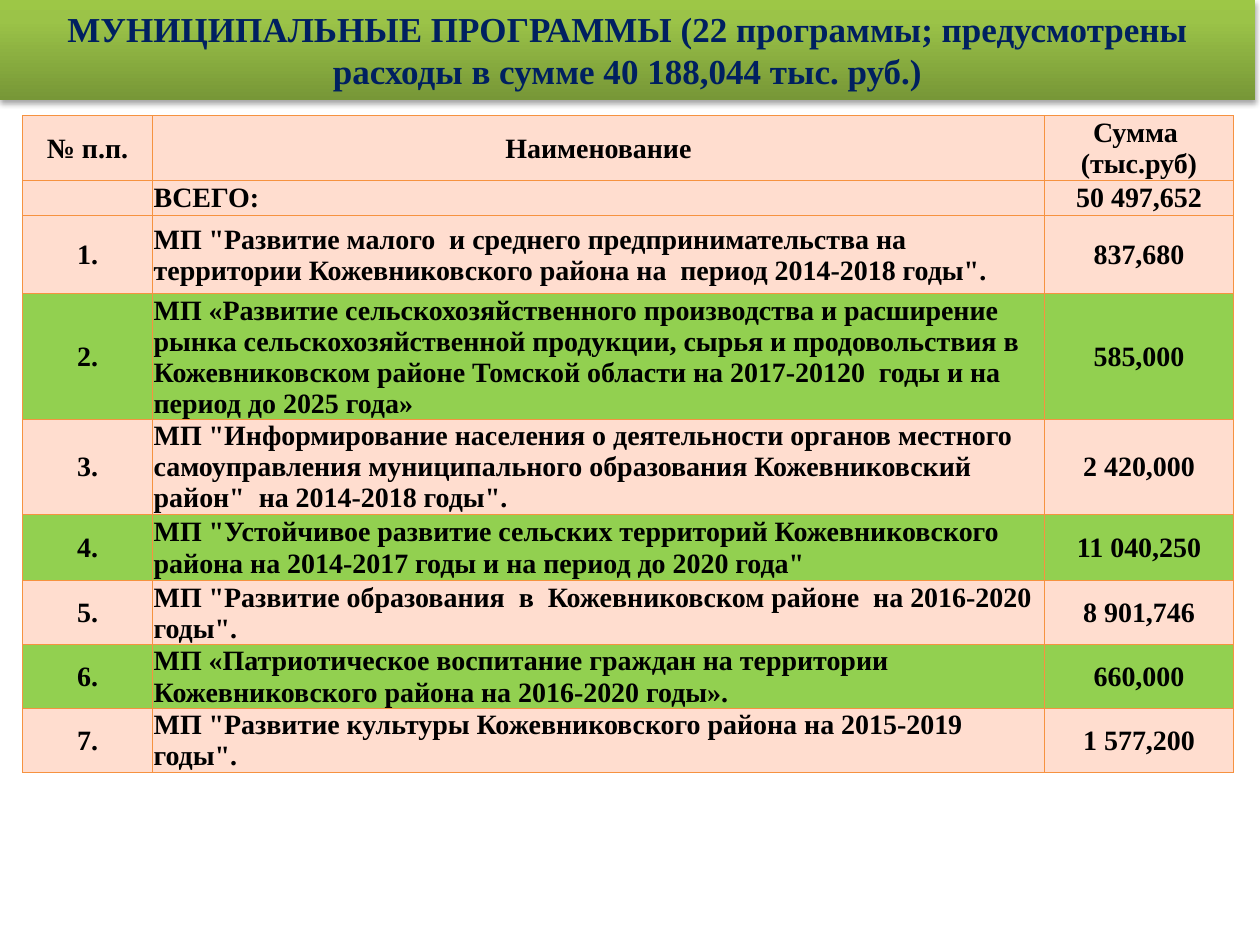
from dataclasses import dataclass
from lxml.etree import SubElement
from pptx import Presentation
from pptx.dml.color import RGBColor
from pptx.enum.text import MSO_ANCHOR as Anchor, MSO_AUTO_SIZE as AutoSize, PP_ALIGN as Align
from pptx.oxml import parse_xml
from pptx.oxml.ns import nsdecls, qn
from pptx.util import Inches, Pt

COLORS = {"navy": "002060", "black": "000000", "peach": "FFDDCF", "green": "92D050",
          "border": "F69240", "dark": "779737", "mid": "9BC348", "light": "9DC746"}
FONT = "Times New Roman"
SLIDE_W, SLIDE_H = 10, 7.5
COL_WIDTHS = (1.03, 7.08, 1.5)
TITLE = "МУНИЦИПАЛЬНЫЕ ПРОГРАММЫ (22 программы; предусмотрены расходы в сумме 40 188,044 тыс. руб.)"


@dataclass
class Row:
    number: str
    name: str
    amount: str
    height: float
    fill: str = "peach"
    name_align: Align = Align.LEFT


ROWS = [
    Row("№ п.п.", "Наименование", "Сумма  (тыс.руб)", 0.51, name_align=Align.CENTER),
    Row("", "ВСЕГО:", "50 497,652", 0.26),
    Row("1.", 'МП "Развитие малого  и среднего предпринимательства на территории '
        'Кожевниковского района на  период 2014-2018 годы".', "837,680", 0.62),
    Row("2.", "МП «Развитие сельскохозяйственного производства и расширение рынка "
        "сельскохозяйственной продукции, сырья и продовольствия в Кожевниковском районе "
        "Томской области на 2017-20120  годы и на период до 2025 года»", "585,000", 0.58, "green"),
    Row("3.", 'МП "Информирование населения о деятельности органов местного самоуправления '
        'муниципального образования Кожевниковский район"  на 2014-2018 годы".',
        "2 420,000", 0.65),
    Row("4.", 'МП "Устойчивое развитие сельских территорий Кожевниковского района '
        'на 2014-2017 годы и на период до 2020 года"', "11 040,250", 0.53, "green"),
    Row("5.", 'МП "Развитие образования  в  Кожевниковском районе  на 2016-2020 годы".',
        "8 901,746", 0.5),
    Row("6.", "МП «Патриотическое воспитание граждан на территории Кожевниковского района "
        "на 2016-2020 годы».", "660,000", 0.51, "green"),
    Row("7.", 'МП "Развитие культуры Кожевниковского района на 2015-2019 годы".',
        "1 577,200", 0.4),
]


def format_text(p, size: int, color: str, align: Align) -> None:
    p.alignment = align
    for r in p.runs:
        r.font.name, r.font.size, r.font.bold = FONT, Pt(size), True
        r.font.color.rgb = RGBColor.from_string(COLORS[color])
    if not p.runs:
        SubElement(p._p, qn("a:endParaRPr"), sz=str(size * 100))


def add_borders(cell) -> None:
    tc_pr = cell._tc.get_or_add_tcPr()
    for side in "LRTB":
        ln = SubElement(tc_pr, qn(f"a:ln{side}"), w=str(Pt(0.75)))
        fill = SubElement(ln, qn("a:solidFill"))
        SubElement(fill, qn("a:srgbClr"), val=COLORS["border"])


def fill_cell(cell, text: str, fill: str, align: Align) -> None:
    cell.text_frame.text = text
    cell.vertical_anchor = Anchor.MIDDLE
    cell.margin_left = cell.margin_right = cell.margin_top = Inches(0.01)
    cell.margin_bottom = 0
    format_text(cell.text_frame.paragraphs[0], 16, "black", align)
    add_borders(cell)
    cell.fill.solid()
    cell.fill.fore_color.rgb = RGBColor.from_string(COLORS[fill])


def add_programs(slide, rows: list[Row]) -> None:
    frame = slide.shapes.add_table(len(rows), len(COL_WIDTHS), Inches(0.18), Inches(0.92),
                                   Inches(sum(COL_WIDTHS)), Inches(5.46))
    table = frame.table
    for column, width in zip(table.columns, COL_WIDTHS):
        column.width = Inches(width)
    for i, row in enumerate(rows):
        table.rows[i].height = Inches(row.height)
        texts = (row.number, row.name, row.amount)
        aligns = (Align.CENTER, row.name_align, Align.CENTER)
        for j, (text, align) in enumerate(zip(texts, aligns)):
            fill_cell(table.cell(i, j), text, row.fill, align)


def style_title(sp) -> None:
    sp.left, sp.top = 0, 0
    sp.width, sp.height = Inches(SLIDE_W * 0.996), Inches(0.79)
    tf = sp.text_frame
    tf.text = TITLE
    tf.word_wrap, tf.auto_size = True, AutoSize.NONE
    tf.vertical_anchor = Anchor.MIDDLE
    format_text(tf.paragraphs[0], 20, "navy", Align.CENTER)
    stops = "".join(f'<a:gs pos="{pos * 1000}"><a:srgbClr val="{COLORS[name]}"/></a:gs>'
                    for pos, name in ((0, "dark"), (80, "mid"), (100, "light")))
    sp_pr = sp._element.spPr
    sp_pr.append(parse_xml(f'<a:prstGeom {nsdecls("a")} prst="rect"><a:avLst/></a:prstGeom>'))
    sp_pr.append(parse_xml(f'<a:gradFill {nsdecls("a")} rotWithShape="1"><a:gsLst>{stops}</a:gsLst>'
                           '<a:lin ang="16200000" scaled="0"/></a:gradFill>'))
    sp_pr.append(parse_xml(
        f'<a:effectLst {nsdecls("a")}><a:outerShdw blurRad="{Pt(3.1)}" dist="{Pt(1.8)}" '
        f'dir="5400000" rotWithShape="0"><a:srgbClr val="{COLORS["black"]}">'
        '<a:alpha val="35000"/></a:srgbClr></a:outerShdw></a:effectLst>'))


def main() -> None:
    prs = Presentation()
    prs.slide_width, prs.slide_height = Inches(SLIDE_W), Inches(SLIDE_H)
    slide = prs.slides.add_slide(prs.slide_layouts[5])
    add_programs(slide, ROWS)
    style_title(slide.shapes.title)
    prs.save("out.pptx")


if __name__ == "__main__":
    main()
